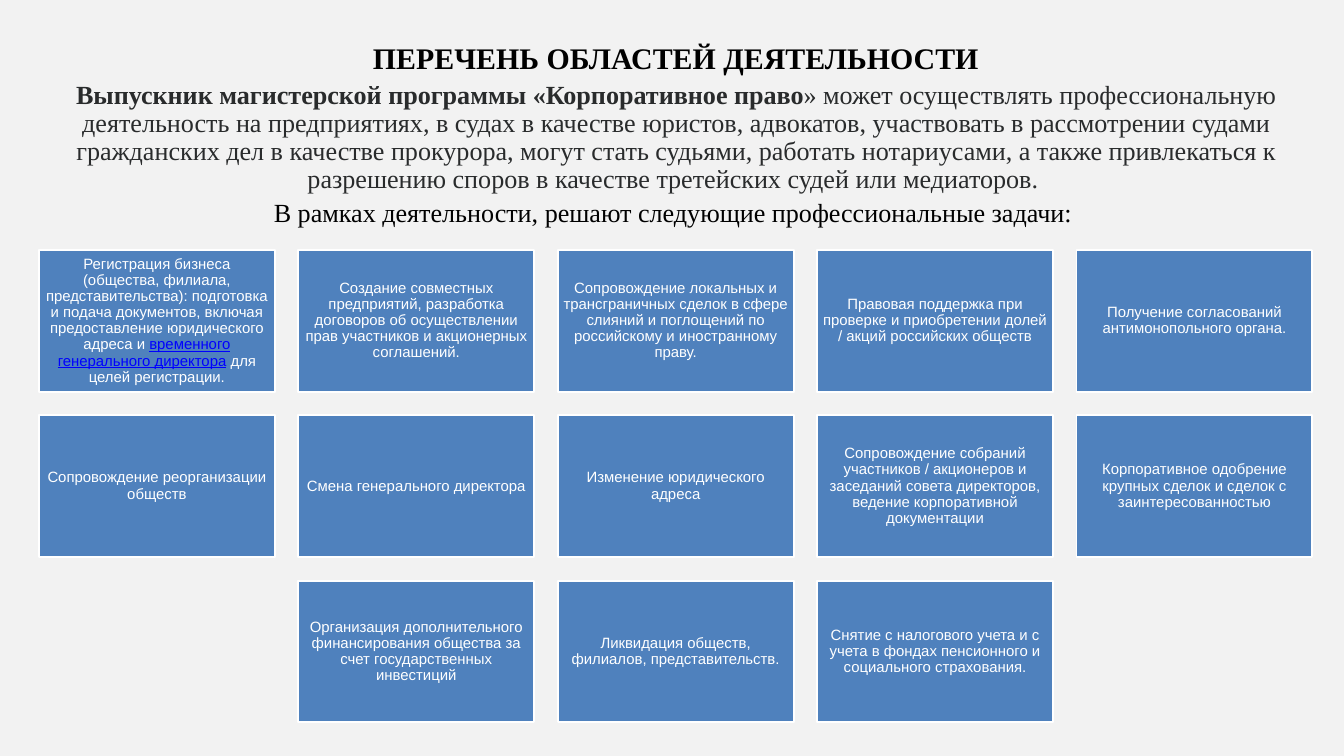
from dataclasses import dataclass
from typing import NamedTuple

from pptx import Presentation
from pptx.dml.color import RGBColor
from pptx.enum.shapes import MSO_SHAPE
from pptx.enum.text import MSO_ANCHOR, PP_ALIGN
from pptx.util import Inches, Pt

RECT = MSO_SHAPE.RECTANGLE
CENTER = PP_ALIGN.CENTER
MIDDLE = MSO_ANCHOR.MIDDLE


@dataclass(frozen=True)
class Theme:
    back: str = "F2F2F2"
    card: str = "4F81BD"
    white: str = "FFFFFF"
    black: str = "000000"
    body: str = "292B2C"
    link: str = "0000FF"
    serif: str = "Times New Roman"
    sans: str = "Arial"
    title: int = 32
    lead: int = 28
    small: int = 16


@dataclass(frozen=True)
class Grid:
    left: float = 0.58
    top: float = 3.72
    cols: int = 5
    wide: float = 3.51
    high: float = 2.11
    gap: float = 0.35

    def box(self, col: float, row: int) -> tuple:
        x = self.left + col * (self.wide + self.gap)
        y = self.top + row * (self.high + self.gap)
        return tuple(Inches(v) for v in (x, y, self.wide, self.high))


class Run(NamedTuple):
    text: str
    color: str
    bold: bool = False
    under: bool = False


THEME = Theme()
GRID = Grid()


def plain(text: str) -> list[Run]:
    return [Run(text, THEME.white)]


ROWS = [
    [
        [
            Run("Регистрация бизнеса (общества, филиала, представительства): подготовка и подача "
                "документов, включая предоставление юридического адреса и ", THEME.white),
            Run("временного генерального директора", THEME.link, under=True),
            Run(" для целей регистрации.", THEME.white),
        ],
        plain("Создание совместных предприятий, разработка договоров об осуществлении прав "
              "участников и акционерных соглашений."),
        plain("Сопровождение локальных и трансграничных сделок в сфере слияний и поглощений "
              "по российскому и иностранному праву."),
        plain("Правовая поддержка при проверке и приобретении долей / акций российских обществ"),
        plain("Получение согласований антимонопольного органа."),
    ],
    [
        plain("Сопровождение реорганизации обществ"),
        plain("Смена генерального директора"),
        plain("Изменение юридического адреса"),
        plain("Сопровождение собраний участников / акционеров и заседаний совета директоров, "
              "ведение корпоративной документации"),
        plain("Корпоративное одобрение крупных сделок и сделок с заинтересованностью"),
    ],
    [
        plain("Организация дополнительного финансирования общества за счет государственных "
              "инвестиций"),
        plain("Ликвидация обществ, филиалов, представительств."),
        plain("Снятие с налогового учета и с учета в фондах пенсионного и социального "
              "страхования."),
    ],
]

HEAD = [
    (THEME.title, [Run("ПЕРЕЧЕНЬ ОБЛАСТЕЙ ДЕЯТЕЛЬНОСТИ", THEME.black, bold=True)]),
    (THEME.lead, [
        Run("Выпускник магистерской программы «Корпоративное право", THEME.body, bold=True),
        Run("» может осуществлять профессиональную деятельность на предприятиях, в судах в "
            "качестве юристов, адвокатов, участвовать в рассмотрении судами гражданских дел в "
            "качестве прокурора, могут стать судьями, работать нотариусами, а также "
            "привлекаться к разрешению споров в качестве третейских судей или медиаторов. ",
            THEME.body),
    ]),
    (THEME.lead, [Run("В рамках деятельности, решают следующие профессиональные задачи: ",
                      THEME.black)]),
]


def write(para, runs: list[Run], *, font: str, size: int, after: float = 0) -> None:
    para.alignment = CENTER
    para.line_spacing = 0.9
    para.space_after = Pt(after)
    for part in runs:
        run = para.add_run()
        run.text = part.text
        run.font.name = font
        run.font.size = Pt(size)
        run.font.bold = part.bold
        run.font.underline = part.under
        run.font.color.rgb = RGBColor.from_string(part.color)


def header(slide) -> None:
    box = slide.shapes.add_textbox(Inches(0.59), Inches(0.6), Inches(18.94), Inches(4.4))
    frame = box.text_frame
    frame.word_wrap = True
    for i, (size, runs) in enumerate(HEAD):
        para = frame.add_paragraph() if i else frame.paragraphs[0]
        write(para, runs, font=THEME.serif, size=size, after=6)


def card(slide, col: float, row: int, runs: list[Run]) -> None:
    shape = slide.shapes.add_shape(RECT, *GRID.box(col, row))
    shape.shadow.inherit = False
    shape.fill.solid()
    shape.fill.fore_color.rgb = RGBColor.from_string(THEME.card)
    shape.line.color.rgb = RGBColor.from_string(THEME.white)
    shape.line.width = Pt(2)
    frame = shape.text_frame
    frame.word_wrap = True
    frame.vertical_anchor = MIDDLE
    frame.margin_left = frame.margin_right = Inches(0.07)
    frame.margin_top = frame.margin_bottom = Inches(0.07)
    write(frame.paragraphs[0], runs, font=THEME.sans, size=THEME.small)


def main() -> None:
    deck = Presentation()
    deck.slide_width = Inches(20)
    deck.slide_height = Inches(11.25)
    slide = deck.slides.add_slide(deck.slide_layouts[6])
    slide.background.fill.solid()
    slide.background.fill.fore_color.rgb = RGBColor.from_string(THEME.back)
    header(slide)
    for row, cards in enumerate(ROWS):
        start = (GRID.cols - len(cards)) / 2
        for i, runs in enumerate(cards):
            card(slide, start + i, row, runs)
    deck.save("out.pptx")


if __name__ == "__main__":
    main()
